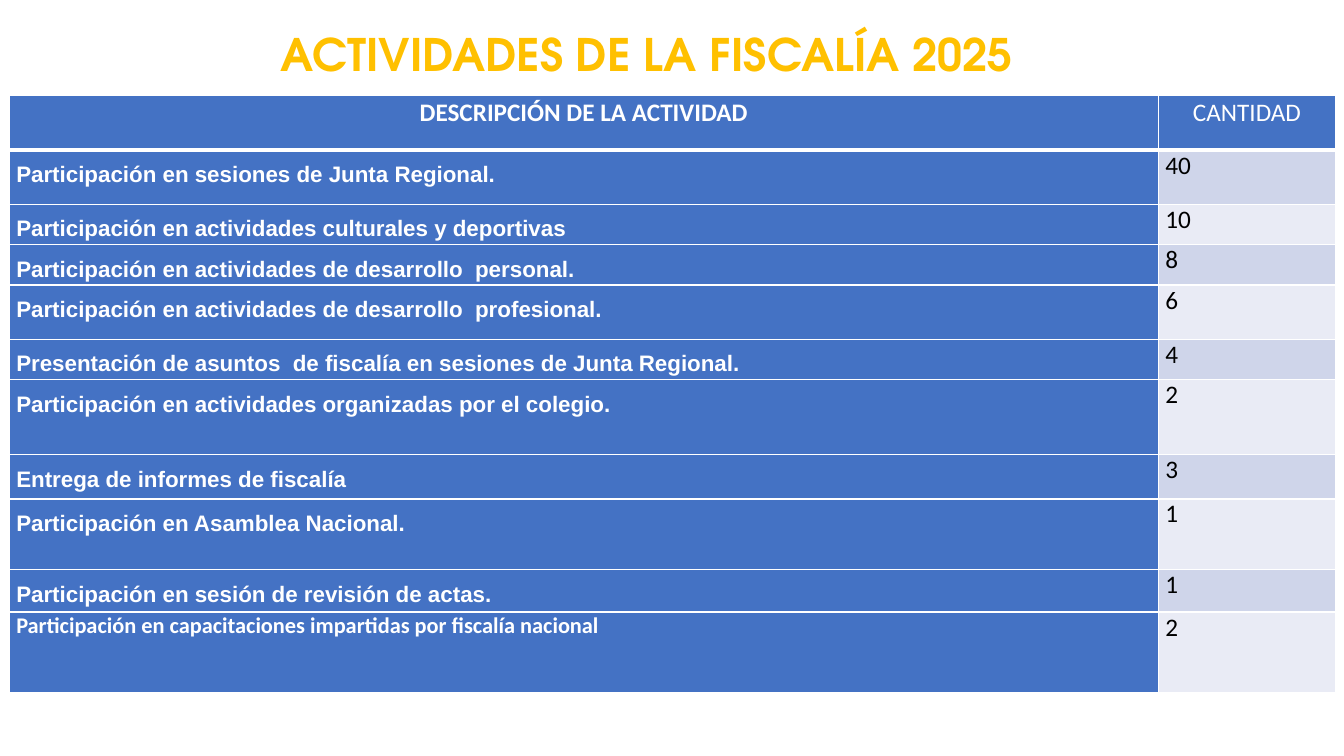
from dataclasses import dataclass

import pptx
import pptx.dml.color
import pptx.enum.text
import pptx.oxml
import pptx.oxml.ns
import pptx.table
import pptx.util

Cm = pptx.util.Cm
Pt = pptx.util.Pt
RGBColor = pptx.dml.color.RGBColor
PP_ALIGN = pptx.enum.text.PP_ALIGN

GOLD = RGBColor(0xFF, 0xC0, 0x00)
BLUE = RGBColor(0x44, 0x72, 0xC4)
BAND_DARK = RGBColor(0xCF, 0xD5, 0xEA)
BAND_LIGHT = RGBColor(0xE9, 0xEB, 0xF5)
WHITE = RGBColor(0xFF, 0xFF, 0xFF)
BLACK = RGBColor(0x00, 0x00, 0x00)


@dataclass(frozen=True)
class Style:
    font: str
    size: int
    color: RGBColor
    bold: bool = True
    align: PP_ALIGN = PP_ALIGN.LEFT
    spacing: float = 1.0
    after: int = 0


@dataclass(frozen=True)
class Activity:
    description: str
    quantity: int
    height: float


TITLE = Style("TeX Gyre Adventor", 32, GOLD, align=PP_ALIGN.CENTER, spacing=0.9)
HEADER = Style("Calibri", 18, WHITE, align=PP_ALIGN.CENTER, spacing=1.07, after=8)
HEADER_PLAIN = Style("Calibri", 18, WHITE, False, PP_ALIGN.CENTER, 1.07, 8)
DESCRIPTION = Style("Arial", 16, WHITE, spacing=1.5)
LAST_DESCRIPTION = Style("Calibri", 16, WHITE)
QUANTITY = Style("Calibri", 18, BLACK, bold=False)

HEADER_HEIGHT = 1.37
COLUMN_WIDTHS = (28.96, 4.47)
ACTIVITIES = (
    Activity("Participación en sesiones de Junta Regional.", 40, 1.37),
    Activity("Participación en actividades culturales y deportivas", 10, 0.94),
    Activity("Participación en actividades de desarrollo  personal.", 8, 0.94),
    Activity("Participación en actividades de desarrollo  profesional.", 6, 1.37),
    Activity("Presentación de asuntos  de fiscalía en sesiones de Junta Regional.", 4, 1.02),
    Activity("Participación en actividades organizadas por el colegio.", 2, 1.88),
    Activity("Entrega de informes de fiscalía", 3, 1.12),
    Activity("Participación en Asamblea Nacional.", 1, 1.78),
    Activity("Participación en sesión de revisión de actas.", 1, 1.07),
    Activity("Participación en capacitaciones impartidas por fiscalía nacional", 2, 2.03),
)


def write(tf, text: str, style: Style) -> None:
    tf.text = text
    p = tf.paragraphs[0]
    p.alignment = style.align
    p.line_spacing = style.spacing
    p.space_after = Pt(style.after)
    font = p.runs[0].font
    font.name = style.font
    font.size = Pt(style.size)
    font.bold = style.bold
    font.color.rgb = style.color


def add_borders(cell: pptx.table._Cell, top: int, bottom: int) -> None:
    """Draw white cell borders; top and bottom are widths in points."""
    tc_pr = cell._tc.get_or_add_tcPr()
    for side, width in (("L", 1), ("R", 1), ("T", top), ("B", bottom)):
        tc_pr.append(pptx.oxml.parse_xml(
            f'<a:ln{side} {pptx.oxml.ns.nsdecls("a")} w="{Pt(width)}">'
            f'<a:solidFill><a:srgbClr val="{WHITE}"/></a:solidFill></a:ln{side}>'))


def fill_cell(cell: pptx.table._Cell, text: str, style: Style, fill: RGBColor,
              top: int = 1, bottom: int = 1) -> None:
    cell.margin_left = cell.margin_right = Cm(0.18)
    cell.margin_top = cell.margin_bottom = 0
    add_borders(cell, top, bottom)
    cell.fill.solid()
    cell.fill.fore_color.rgb = fill
    write(cell.text_frame, text, style)


def add_title(slide) -> None:
    tf = slide.shapes.add_textbox(Cm(2.34), Cm(0.69), Cm(27.94), Cm(2.51)).text_frame
    tf.word_wrap = True
    write(tf, "ACTIVIDADES DE LA FISCALÍA 2025", TITLE)


def add_activity_table(slide) -> None:
    heights = [HEADER_HEIGHT] + [activity.height for activity in ACTIVITIES]
    table = slide.shapes.add_table(
        len(heights), len(COLUMN_WIDTHS), Cm(0.23), Cm(2.41),
        Cm(sum(COLUMN_WIDTHS)), Cm(sum(heights))).table
    for column, width in zip(table.columns, COLUMN_WIDTHS):
        column.width = Cm(width)
    for row, height in zip(table.rows, heights):
        row.height = Cm(height)

    fill_cell(table.cell(0, 0), "DESCRIPCIÓN DE LA ACTIVIDAD", HEADER, BLUE, bottom=3)
    fill_cell(table.cell(0, 1), "CANTIDAD", HEADER_PLAIN, BLUE, bottom=3)
    for i, activity in enumerate(ACTIVITIES, start=1):
        style = LAST_DESCRIPTION if i == len(ACTIVITIES) else DESCRIPTION
        band = BAND_DARK if i % 2 else BAND_LIGHT
        top = 3 if i == 1 else 1
        fill_cell(table.cell(i, 0), activity.description, style, BLUE, top)
        fill_cell(table.cell(i, 1), str(activity.quantity), QUANTITY, band, top)


def main() -> None:
    prs = pptx.Presentation()
    prs.slide_width = Cm(33.87)
    prs.slide_height = Cm(19.05)
    slide = prs.slides.add_slide(prs.slide_layouts[6])
    add_title(slide)
    add_activity_table(slide)
    prs.save("out.pptx")


if __name__ == "__main__":
    main()
